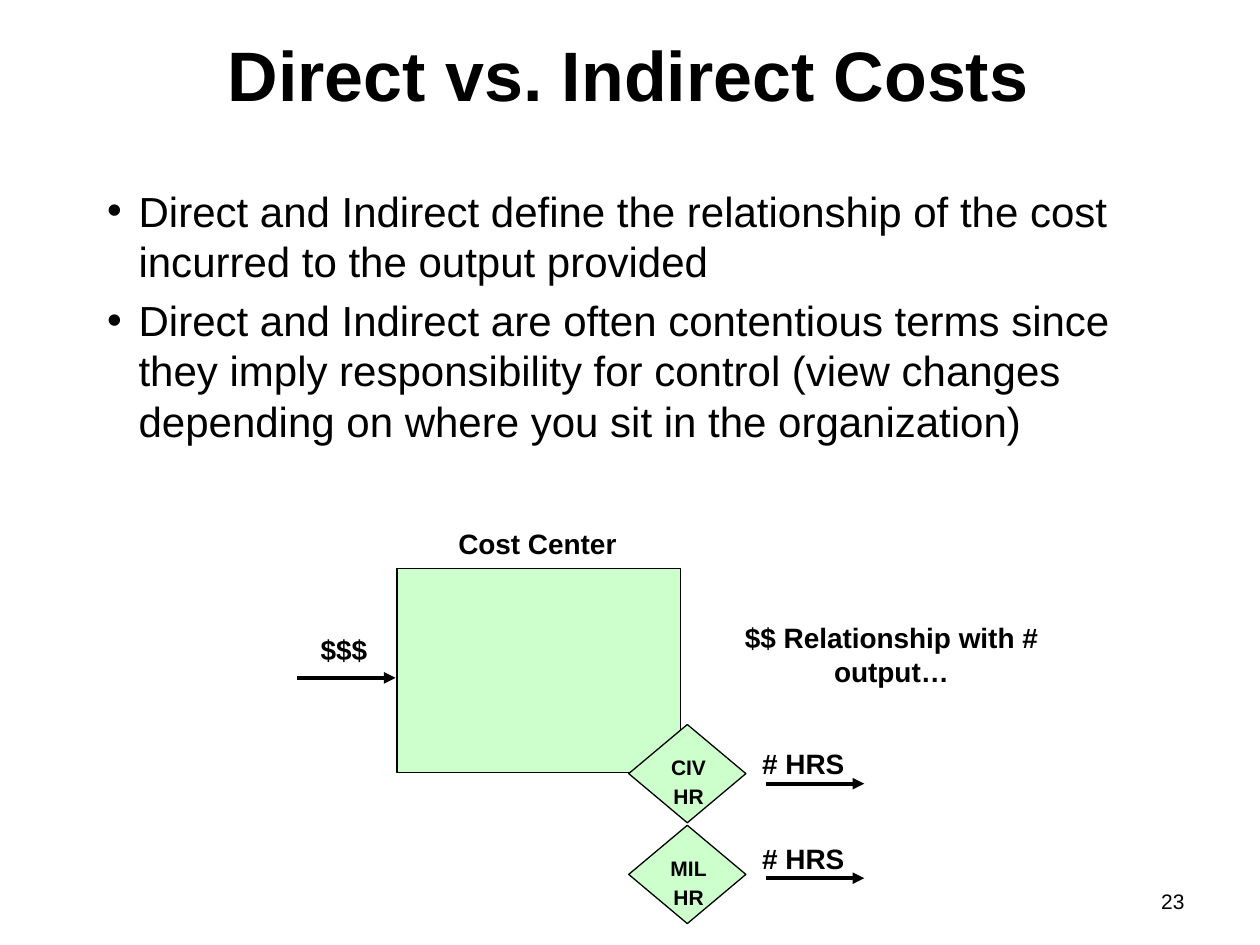
from dataclasses import dataclass

from lxml.etree import SubElement
from pptx import Presentation
from pptx.dml.color import RGBColor
from pptx.enum.shapes import MSO_CONNECTOR, MSO_SHAPE
from pptx.enum.text import MSO_ANCHOR, MSO_AUTO_SIZE, PP_ALIGN
from pptx.oxml.ns import qn
from pptx.util import Inches, Pt

BLACK = RGBColor(0x00, 0x00, 0x00)
GREEN = RGBColor(0xCC, 0xFF, 0xCC)
FONT = "Arial"


@dataclass
class Label:
    lines: list[str]
    left: float
    top: float
    width: float
    height: float = 0.37
    size: int = 16
    bold: bool = True
    align: PP_ALIGN = PP_ALIGN.CENTER


@dataclass
class Output:
    kind: str
    top: float      # top of the diamond
    arrow: float    # height of the arrow


LABELS = [
    Label(["Cost Center"], 3.22, 4.13, 2.09),
    Label(["$$$"], 2.25, 4.97, 0.96),
    Label(["$$ Relationship with # output…"], 5.57, 4.88, 3.01, 0.64),
    Label(["23"], 7.17, 7, 2.33, 0.4, 12, False, PP_ALIGN.RIGHT),
]
OUTPUTS = [Output("CIV", 5.75, 6.22), Output("MIL", 6.55, 6.97)]
POINTS = [
    "Direct and Indirect define the relationship of the cost incurred "
    "to the output provided",
    "Direct and Indirect are often contentious terms since they imply "
    "responsibility for control (view changes depending on where you sit "
    "in the organization)",
]


def place(shape, left: float, top: float, width: float, height: float) -> None:
    shape.left, shape.top = Inches(left), Inches(top)
    shape.width, shape.height = Inches(width), Inches(height)


def write(para, text: str, size: int, bold: bool = False) -> None:
    run = para.add_run()
    run.text = text
    font = run.font
    font.name, font.size, font.bold = FONT, Pt(size), bold
    font.color.rgb = BLACK


def add_label(slide, label: Label) -> None:
    box = slide.shapes.add_textbox(0, 0, 0, 0)
    place(box, label.left, label.top, label.width, label.height)
    frame = box.text_frame
    frame.word_wrap = True
    for i, line in enumerate(label.lines):
        para = frame.add_paragraph() if i else frame.paragraphs[0]
        para.alignment = label.align
        para.space_after = Pt(2)
        write(para, line, label.size, label.bold)


def add_block(slide, kind: MSO_SHAPE, left: float, top: float,
              width: float, height: float) -> None:
    """Draw a green shape with a thin black outline."""
    block = slide.shapes.add_shape(kind, 0, 0, 0, 0)
    place(block, left, top, width, height)
    block.shadow.inherit = False
    block.fill.solid()
    block.fill.fore_color.rgb = GREEN
    block.line.color.rgb = BLACK
    block.line.width = Pt(0.75)


def add_arrow(slide, left: float, top: float) -> None:
    arrow = slide.shapes.add_connector(
        MSO_CONNECTOR.STRAIGHT, Inches(left), Inches(top),
        Inches(left + 0.78), Inches(top))
    arrow.line.color.rgb = BLACK
    arrow.line.width = Pt(2.25)
    SubElement(arrow.line._get_or_add_ln(), qn("a:tailEnd"), type="triangle")
    SubElement(arrow._element.spPr, qn("a:effectLst"))


def add_output(slide, out: Output) -> None:
    add_block(slide, MSO_SHAPE.DIAMOND, 4.99, out.top, 0.93, 0.78)
    add_label(slide, Label([out.kind, "HR"], 5.18, out.top + 0.19,
                           0.57, 0.53, 12))
    add_label(slide, Label(["# HRS"], 5.42, out.arrow - 0.34, 1.91))
    add_arrow(slide, 6.08, out.arrow)


def fill_title(title) -> None:
    place(title, 1.32, 0.25, 7.33, 0.91)
    frame = title.text_frame
    frame.auto_size = MSO_AUTO_SIZE.NONE
    frame.vertical_anchor = MSO_ANCHOR.TOP
    frame.margin_top = frame.margin_bottom = 0
    para = frame.paragraphs[0]
    para.alignment = PP_ALIGN.CENTER
    write(para, "Direct vs. Indirect Costs", 40, True)


def fill_body(body) -> None:
    place(body, 0.75, 1.42, 8.5, 4.5)
    frame = body.text_frame
    frame.auto_size = MSO_AUTO_SIZE.NONE
    for i, point in enumerate(POINTS):
        para = frame.add_paragraph() if i else frame.paragraphs[0]
        para.space_before = Pt(4.8 if i else 0)
        props = para._p.get_or_add_pPr()
        props.set("marL", str(Inches(0.25)))
        props.set("indent", str(-Inches(0.25)))
        SubElement(props, qn("a:buChar"), char="•")
        write(para, point, 24)


def main() -> None:
    deck = Presentation()
    deck.slide_width, deck.slide_height = Inches(10), Inches(7.5)
    slide = deck.slides.add_slide(deck.slide_layouts[1])
    fill_title(slide.shapes.title)
    fill_body(slide.placeholders[1])
    add_block(slide, MSO_SHAPE.RECTANGLE, 3.15, 4.51, 2.25, 1.62)
    add_arrow(slide, 2.36, 5.38)
    for label in LABELS:
        add_label(slide, label)
    for out in OUTPUTS:
        add_output(slide, out)
    deck.save("out.pptx")


if __name__ == "__main__":
    main()
